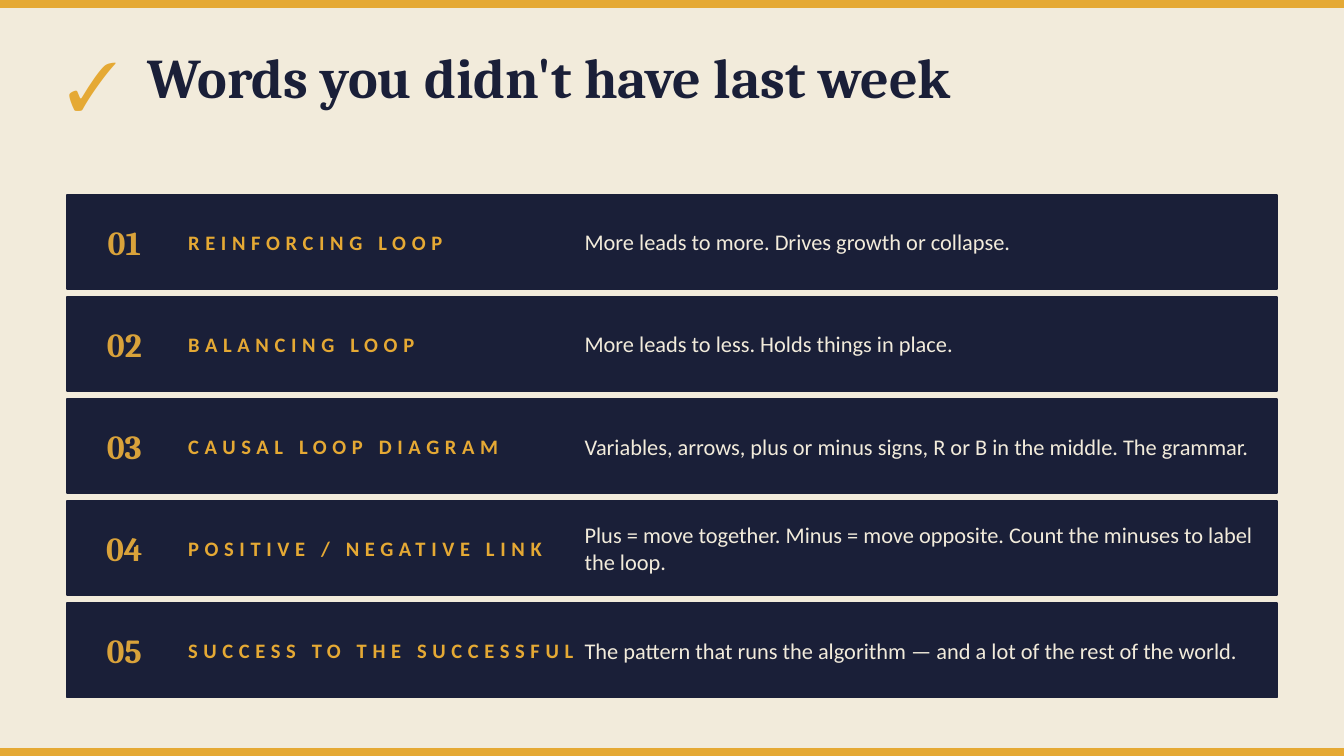
import pptx
import pptx.dml.color
import pptx.enum.shapes
import pptx.enum.text
from pptx.util import Inches

# Content
TITLE = "Words you didn't have last week"
CHECK = "✓"
TERMS = [
    ("REINFORCING LOOP", "More leads to more. Drives growth or collapse."),
    ("BALANCING LOOP", "More leads to less. Holds things in place."),
    ("CAUSAL LOOP DIAGRAM",
     "Variables, arrows, plus or minus signs, R or B in the middle. The grammar."),
    ("POSITIVE / NEGATIVE LINK",
     "Plus = move together. Minus = move opposite. Count the minuses to label the loop."),
    ("SUCCESS TO THE SUCCESSFUL",
     "The pattern that runs the algorithm — and a lot of the rest of the world."),
]

# Style and layout
CREAM, NAVY, GOLD, NUMBER_GOLD = "F2EBDB", "1A1F38", "E5A934", "D9A23A"
HEADING, BODY = "Cambria", "Calibri"
WIDTH = 10
HEIGHT = WIDTH * 9 / 16
EDGE_HEIGHT = 0.05
HEADER_TOP, HEADER_HEIGHT = 0.32, 0.7
ROW_LEFT, ROW_WIDTH, ROW_HEIGHT = 0.5, 9, 0.7
FIRST_ROW, ROW_STEP = 1.45, 0.76

TOP = pptx.enum.text.MSO_ANCHOR.TOP
MIDDLE = pptx.enum.text.MSO_ANCHOR.MIDDLE
LEFT = pptx.enum.text.PP_ALIGN.LEFT
CENTER = pptx.enum.text.PP_ALIGN.CENTER


def rgb(value):
    return pptx.dml.color.RGBColor.from_string(value)


def add_bar(left, top, width, height, color):
    bar = slide.shapes.add_shape(
        pptx.enum.shapes.MSO_SHAPE.RECTANGLE,
        Inches(left), Inches(top), Inches(width), Inches(height))
    bar.shadow.inherit = False
    bar.fill.solid()
    bar.fill.fore_color.rgb = rgb(color)
    bar.line.color.rgb = rgb(color)
    bar.line.width = pptx.util.Pt(1)


def write(box, text, size, font, color, bold=True, anchor=MIDDLE,
          align=LEFT, spacing=0):
    frame = box.text_frame
    frame.word_wrap = True
    frame.auto_size = pptx.enum.text.MSO_AUTO_SIZE.NONE
    frame.vertical_anchor = anchor
    frame.margin_left = frame.margin_right = 0
    frame.margin_top = frame.margin_bottom = 0
    paragraph = frame.paragraphs[0]
    paragraph.alignment = align
    run = paragraph.add_run()
    run.text = text
    run.font.size = pptx.util.Pt(size)
    run.font.name = font
    run.font.bold = bold
    run.font.color.rgb = rgb(color)
    if spacing:
        # Letter spacing is stored in hundredths of a point
        run.font._element.set("spc", str(spacing * 100))


def add_text(left, top, width, height, *content, **style):
    box = slide.shapes.add_textbox(
        Inches(left), Inches(top), Inches(width), Inches(height))
    write(box, *content, **style)


presentation = pptx.Presentation()
presentation.slide_width = Inches(WIDTH)
presentation.slide_height = Inches(HEIGHT)
slide = presentation.slides.add_slide(presentation.slide_layouts[5])
slide.background.fill.solid()
slide.background.fill.fore_color.rgb = rgb(CREAM)

# Edge bars
for edge_top in (0, HEIGHT - EDGE_HEIGHT):
    add_bar(0, edge_top, WIDTH, EDGE_HEIGHT, GOLD)

# Header
add_text(0.5, HEADER_TOP, 0.6, HEADER_HEIGHT, CHECK, 36, HEADING, GOLD, anchor=TOP)
title = slide.shapes.title
title.left, title.top = Inches(1.1), Inches(HEADER_TOP)
title.width, title.height = Inches(8.5), Inches(HEADER_HEIGHT)
write(title, TITLE, 30, HEADING, NAVY, anchor=TOP)

# Numbered rows: term and meaning
for index, (term, meaning) in enumerate(TERMS):
    top = FIRST_ROW + index * ROW_STEP
    add_bar(ROW_LEFT, top, ROW_WIDTH, ROW_HEIGHT, NAVY)
    add_text(ROW_LEFT, top, 0.85, ROW_HEIGHT, f"{index + 1:02}", 18, HEADING,
             NUMBER_GOLD, align=CENTER)
    add_text(1.4, top, 2.9, ROW_HEIGHT, term, 11, BODY, GOLD, spacing=3)
    add_text(4.35, top, 5.1, ROW_HEIGHT, meaning, 12, BODY, CREAM, bold=False)

presentation.save("out.pptx")
